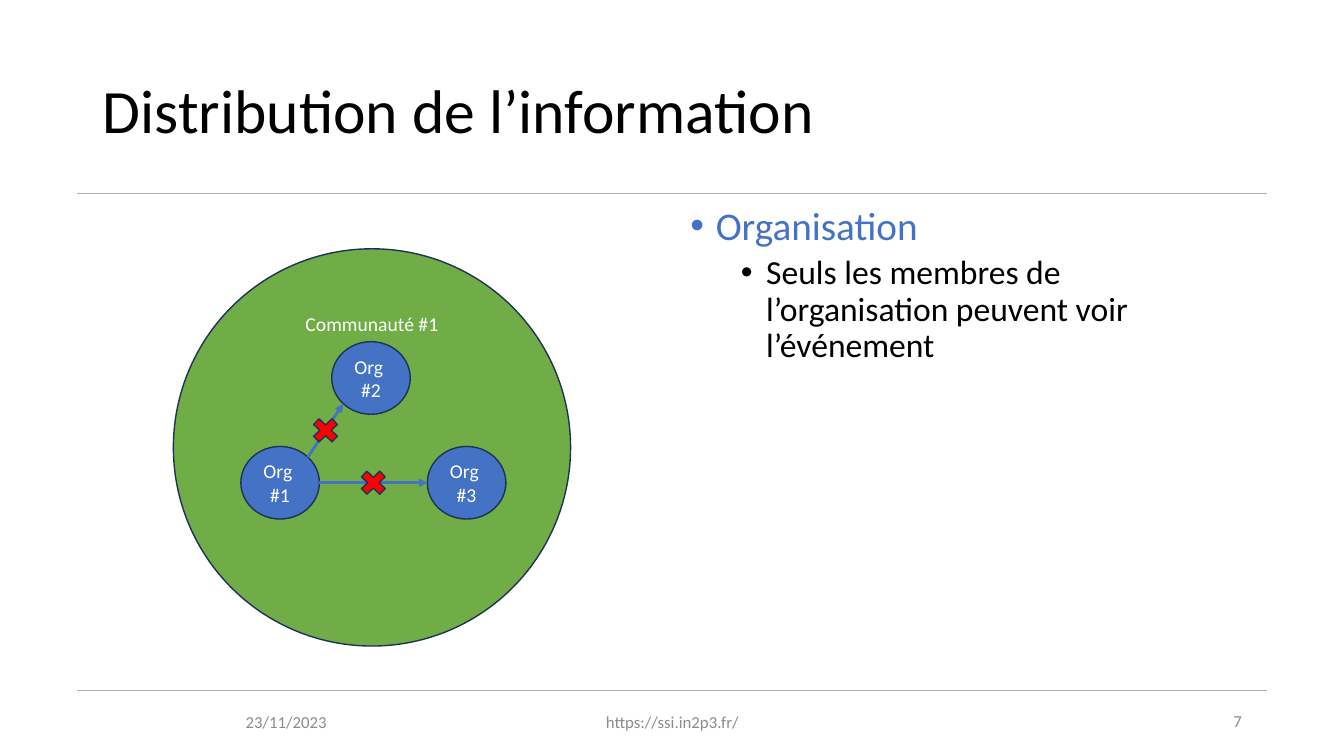
"""Build the slide on how information is distributed inside a community."""
import dataclasses
import math

import lxml.etree
import pptx
import pptx.dml.color
import pptx.enum.shapes
import pptx.enum.text
import pptx.oxml.ns
import pptx.util

Cm = pptx.util.Cm
Pt = pptx.util.Pt
ShapeType = pptx.enum.shapes.MSO_SHAPE
Align = pptx.enum.text.PP_ALIGN
Anchor = pptx.enum.text.MSO_ANCHOR


@dataclasses.dataclass(frozen=True)
class Theme:
    """Hold the font, colours and type sizes of the slide."""
    font: str = "Calibri"
    black: str = "000000"
    white: str = "FFFFFF"
    blue: str = "4472C4"
    green: str = "70AD47"
    red: str = "FF0000"
    outline: str = "1E3256"
    rule: str = "AFABAB"
    muted: str = "8C8C8C"
    title_size: int = 44
    heading_size: int = 28
    body_size: int = 24
    label_size: int = 14
    footer_size: int = 12


THEME = Theme()
ORG_WIDTH, ORG_HEIGHT = 1.98, 1.83
CROSS_WIDTH, CROSS_HEIGHT = 0.89, 0.84


def rgb(value):
    """Turn a hex string into a colour."""
    return pptx.dml.color.RGBColor.from_string(value)


def add_run(paragraph, text, size, color):
    """Append one formatted run to a paragraph."""
    run = paragraph.add_run()
    run.text = text
    run.font.name = THEME.font
    run.font.size = Pt(size)
    run.font.color.rgb = rgb(color)


def add_xml(parent, tag, **attributes):
    """Append a drawing element to a parent element."""
    name = pptx.oxml.ns.qn(tag)
    return lxml.etree.SubElement(parent, name, attributes)


def set_title(slide, text):
    """Place and fill the title placeholder."""
    title = slide.shapes.title
    title.left, title.top = Cm(2.34), Cm(1.02)
    title.width, title.height = Cm(29.21), Cm(3.68)
    frame = title.text_frame
    frame.vertical_anchor = Anchor.MIDDLE
    frame.word_wrap = True
    paragraph = frame.paragraphs[0]
    paragraph.alignment = Align.LEFT
    paragraph.line_spacing = 0.9
    add_run(paragraph, text, THEME.title_size, THEME.black)


def add_line(slide, start, end, color, width):
    """Draw a straight line between two points in centimetres."""
    line = slide.shapes.add_connector(
        pptx.enum.shapes.MSO_CONNECTOR.STRAIGHT,
        *map(Cm, (*start, *end)))
    line.line.color.rgb = rgb(color)
    line.line.width = Pt(width)
    add_xml(line._element.spPr, "a:effectLst")
    return line


def add_blocked_arrow(slide, start, end):
    """Draw an arrow with a red cross at its middle."""
    arrow = add_line(slide, start, end, THEME.blue, 2)
    add_xml(arrow.line._get_or_add_ln(), "a:tailEnd", type="triangle")
    left = (start[0] + end[0] - CROSS_WIDTH) / 2
    top = (start[1] + end[1] - CROSS_HEIGHT) / 2
    add_figure(slide, ShapeType.MATH_MULTIPLY,
               (left, top, CROSS_WIDTH, CROSS_HEIGHT), THEME.red)


def add_figure(slide, kind, box, color):
    """Draw an outlined preset shape."""
    figure = slide.shapes.add_shape(kind, *map(Cm, box))
    figure.shadow.inherit = False
    figure.fill.solid()
    figure.fill.fore_color.rgb = rgb(color)
    figure.line.color.rgb = rgb(THEME.outline)
    figure.line.width = Pt(1)
    return figure


def add_circle(slide, box, color, anchor, lines):
    """Draw an ellipse with centred lines of label text."""
    circle = add_figure(slide, ShapeType.OVAL, box, color)
    frame = circle.text_frame
    frame.vertical_anchor = anchor
    frame.margin_left = frame.margin_right = 0
    paragraph = frame.paragraphs[0]
    paragraph.alignment = Align.CENTER
    for index, text in enumerate(lines):
        if index:
            paragraph.add_line_break()
        add_run(paragraph, text, THEME.label_size, THEME.white)


def add_text_box(slide, box):
    """Add a wrapping text box and return its frame."""
    frame = slide.shapes.add_textbox(*map(Cm, box)).text_frame
    frame.word_wrap = True
    return frame


def add_footer(slide, box, text, alignment):
    """Add one muted footer text."""
    frame = add_text_box(slide, box)
    frame.vertical_anchor = Anchor.MIDDLE
    paragraph = frame.paragraphs[0]
    paragraph.alignment = alignment
    add_run(paragraph, text, THEME.footer_size, THEME.muted)


def add_bullet(paragraph, text, level, size, color):
    """Fill a paragraph as a bullet of the given level."""
    properties = paragraph._p.get_or_add_pPr()
    properties.set("marL", str(Cm(0.64 + 1.27 * level)))
    properties.set("indent", str(Cm(-0.64)))
    add_xml(properties, "a:buFont", typeface="Arial")
    add_xml(properties, "a:buChar", char="•")
    paragraph.level = level
    paragraph.line_spacing = 0.9
    if level:
        paragraph.space_before = Pt(5)
    add_run(paragraph, text, size, color)


def add_message(slide):
    """Write the bullets on the right side."""
    frame = add_text_box(slide, (17.15, 5.08, 14.4, 12.09))
    add_bullet(frame.paragraphs[0], "Organisation", 0,
               THEME.heading_size, THEME.blue)
    add_bullet(frame.add_paragraph(),
               "Seuls les membres de l’organisation peuvent voir l’événement",
               1, THEME.body_size, THEME.black)


def edge_point(corner, angle):
    """Return the point of an organisation's outline at an angle in degrees."""
    radians = math.radians(angle)
    return (corner[0] + ORG_WIDTH / 2 * (1 + math.cos(radians)),
            corner[1] + ORG_HEIGHT / 2 * (1 - math.sin(radians)))


def add_community(slide):
    """Draw the community, its organisations and the blocked arrows."""
    add_circle(slide, (4.37, 6.27, 10.01, 10.01), THEME.green,
               Anchor.TOP, ["Communauté #1"])
    corners = {1: (6.07, 11.25), 2: (8.36, 8.61), 3: (10.77, 11.25)}
    for number, corner in corners.items():
        add_circle(slide, (*corner, ORG_WIDTH, ORG_HEIGHT), THEME.blue,
                   Anchor.MIDDLE, ["Org ", f"#{number}"])
    for target, start_angle, end_angle in ((2, 45, 225), (3, 0, 180)):
        add_blocked_arrow(slide, edge_point(corners[1], start_angle),
                          edge_point(corners[target], end_angle))


def main():
    """Build and save the presentation."""
    presentation = pptx.Presentation()
    presentation.slide_width = Cm(33.87)
    presentation.slide_height = Cm(19.05)
    slide = presentation.slides.add_slide(presentation.slide_layouts[5])
    for top in (4.88, 17.4):
        add_line(slide, (1.93, top), (31.93, top), THEME.rule, 1)
    set_title(slide, "Distribution de l’information")
    add_community(slide)
    add_message(slide)
    add_footer(slide, (5.94, 17.68, 4.6, 1.02), "23/11/2023", Align.LEFT)
    add_footer(slide, (11.23, 17.68, 11.43, 1.02),
               "https://ssi.in2p3.fr/", Align.CENTER)
    add_footer(slide, (23.93, 17.65, 7.62, 1.02), "7", Align.RIGHT)
    presentation.save("out.pptx")


if __name__ == "__main__":
    main()
